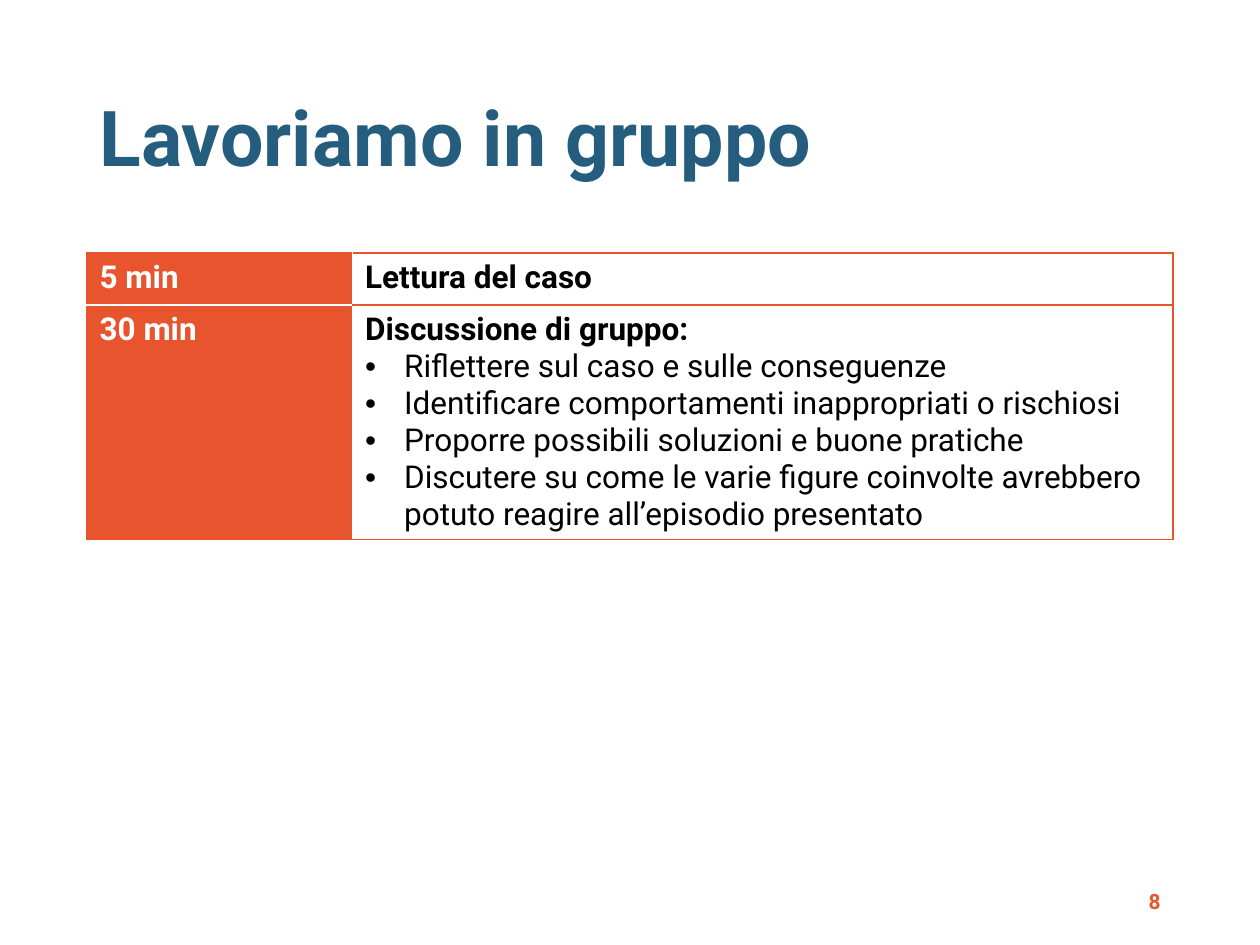
from dataclasses import dataclass

from lxml.etree import SubElement
from pptx import Presentation
from pptx.dml.color import RGBColor as Rgb
from pptx.enum.text import MSO_ANCHOR as Anchor, MSO_AUTO_SIZE as AutoSize, PP_ALIGN as Align
from pptx.oxml import parse_xml
from pptx.oxml.ns import nsdecls, qn
from pptx.util import Inches, Pt


@dataclass(frozen=True)
class Theme:
    """Colours, font and type sizes of the deck."""
    font: str = "Roboto"
    blue: str = "255D7E"
    orange: str = "E7542E"
    white: str = "FFFFFF"
    black: str = "000000"
    title: int = 44
    body: int = 18
    small: int = 12
    rule: int = 1


THEME = Theme()
WIDTH, HEIGHT = Inches(10), Inches(7.5)
MARGIN = 0.069
CONTENT = 1 - 2 * MARGIN
TIME_SHARE = 0.2445
ROW_HEIGHTS = 0.41, 1.86
BULLET_INDENT = Inches(0.31)

AGENDA = [
    ("5 min", "Lettura del caso", []),
    ("30 min", "Discussione di gruppo:", [
        "Riflettere sul caso e sulle conseguenze",
        "Identificare comportamenti inappropriati o rischiosi",
        "Proporre possibili soluzioni e buone pratiche",
        "Discutere su come le varie figure coinvolte avrebbero potuto reagire all’episodio presentato",
    ]),
]


def share_box(left, top, width, height):
    """Turn shares of the slide into a box in slide units."""
    return int(left * WIDTH), int(top * HEIGHT), int(width * WIDTH), int(height * HEIGHT)


def add_text(paragraph, wording, size, color, bold=True):
    """Add one formatted run to a paragraph."""
    run = paragraph.add_run()
    run.text = wording
    run.font.name = THEME.font
    run.font.size = Pt(size)
    run.font.bold = bold
    run.font.color.rgb = Rgb.from_string(color)


def add_bullet(paragraph):
    """Give a paragraph a round bullet with a hanging indent."""
    props = paragraph._p.get_or_add_pPr()
    props.set("marL", str(BULLET_INDENT))
    props.set("indent", str(-BULLET_INDENT))
    SubElement(props, qn("a:buFont"), typeface="Arial")
    SubElement(props, qn("a:buChar"), char="•")


def style_cell(cell, fill, borders):
    """Fill a cell and draw its borders, given in L, R, T, B order."""
    cell.fill.solid()
    cell.fill.fore_color.rgb = Rgb.from_string(fill)
    props = cell._tc.get_or_add_tcPr()
    for position, (side, color) in enumerate(borders.items()):
        props.insert(position, parse_xml(
            f'<a:ln{side} {nsdecls("a")} w="{Pt(THEME.rule)}"><a:solidFill>'
            f'<a:srgbClr val="{color}"/></a:solidFill></a:ln{side}>'))


def place_title(slide, box, wording):
    """Place the slide title in the given box."""
    title = slide.shapes.title
    title.left, title.top, title.width, title.height = box
    frame = title.text_frame
    frame.word_wrap = True
    frame.auto_size = AutoSize.NONE
    frame.vertical_anchor = Anchor.MIDDLE
    heading = frame.paragraphs[0]
    heading.alignment = Align.LEFT
    heading.line_spacing = 0.9
    add_text(heading, wording, THEME.title, THEME.blue)


def place_agenda(slide, box, agenda):
    """Place the table of times and activities in the given box."""
    table = slide.shapes.add_table(len(agenda), 2, *box).table
    table.first_row = table.horz_banding = False
    table.columns[0].width = int(box[2] * TIME_SHARE)
    table.columns[1].width = box[2] - table.columns[0].width
    last = len(agenda) - 1
    for index, (duration, activity, steps) in enumerate(agenda):
        table.rows[index].height = Inches(ROW_HEIGHTS[index])
        time_cell, activity_cell = table.cell(index, 0), table.cell(index, 1)
        style_cell(time_cell, THEME.orange, {
            "L": THEME.orange,
            "T": THEME.white if index else THEME.orange,
            "B": THEME.orange if index == last else THEME.white,
        })
        style_cell(activity_cell, THEME.white, dict.fromkeys("RTB", THEME.orange))
        add_text(time_cell.text_frame.paragraphs[0], duration, THEME.body, THEME.white)
        activity_frame = activity_cell.text_frame
        add_text(activity_frame.paragraphs[0], activity, THEME.body, THEME.black)
        for step in steps:
            item = activity_frame.add_paragraph()
            add_bullet(item)
            add_text(item, step, THEME.body, THEME.black, bold=False)


def place_page_number(slide, box, number):
    """Place the page number at the right of the given box."""
    frame = slide.shapes.add_textbox(*box).text_frame
    frame.word_wrap = True
    frame.vertical_anchor = Anchor.MIDDLE
    frame.paragraphs[0].alignment = Align.RIGHT
    add_text(frame.paragraphs[0], number, THEME.small, THEME.orange)


def main():
    """Build the group work slide and save it."""
    deck = Presentation()
    deck.slide_width, deck.slide_height = WIDTH, HEIGHT
    slide = deck.slides.add_slide(deck.slide_layouts[5])
    place_title(slide, share_box(MARGIN, 0.053, CONTENT, 0.193), "Lavoriamo in gruppo")
    place_agenda(slide, share_box(MARGIN, 0.268, CONTENT, sum(ROW_HEIGHTS) / 7.5), AGENDA)
    place_page_number(slide, share_box(1 - MARGIN - 0.225, 0.927, 0.225, 0.053), "8")
    deck.save("out.pptx")


if __name__ == "__main__":
    main()
